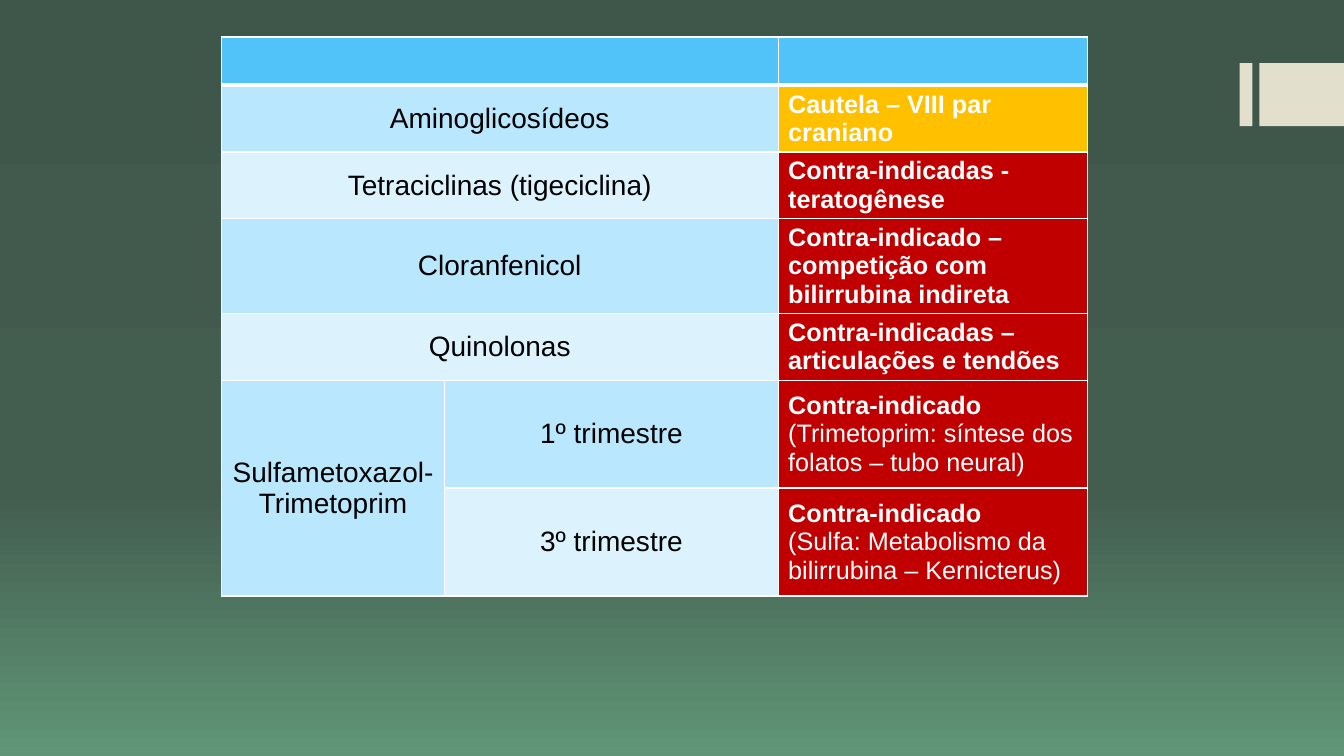
from copy import deepcopy

from lxml.etree import SubElement
from pptx import Presentation
from pptx.dml.color import RGBColor
from pptx.enum.shapes import MSO_SHAPE
from pptx.enum.text import MSO_ANCHOR, PP_ALIGN
from pptx.oxml.ns import qn
from pptx.util import Cm, Pt

BLACK = RGBColor(0x00, 0x00, 0x00)
WHITE = RGBColor(0xFF, 0xFF, 0xFF)
HEADER_BLUE = RGBColor(0x51, 0xC3, 0xF9)
BAND_BLUE = RGBColor(0xB9, 0xE7, 0xFD)
PALE_BLUE = RGBColor(0xDC, 0xF3, 0xFE)
AMBER = RGBColor(0xFF, 0xC0, 0x00)
RED = RGBColor(0xC0, 0x00, 0x00)
BEIGE = RGBColor(0xE2, 0xDF, 0xCC)
GRADIENT = [
    (0, RGBColor(0x3F, 0x56, 0x4A)),
    (0.65, RGBColor(0x43, 0x5D, 0x4F)),
    (1, RGBColor(0x60, 0x96, 0x77)),
]

ROWS = [
    ("", "", [], HEADER_BLUE),
    ("Aminoglicosídeos", "", ["Cautela – VIII par craniano"], AMBER),
    ("Tetraciclinas (tigeciclina)", "", ["Contra-indicadas - teratogênese"], RED),
    ("Cloranfenicol", "", ["Contra-indicado – competição com bilirrubina indireta"], RED),
    ("Quinolonas", "", ["Contra-indicadas – articulações e tendões"], RED),
    ("Sulfametoxazol-Trimetoprim", "1º trimestre",
     ["Contra-indicado", "(Trimetoprim: síntese dos folatos – tubo neural)"], RED),
    ("", "3º trimestre",
     ["Contra-indicado", "(Sulfa: Metabolismo da bilirrubina – Kernicterus)"], RED),
]
COLUMN_WIDTHS = [5.63, 8.4, 7.8]
ROW_HEIGHTS = [1.22, 1.68, 1.68, 2.38, 1.68, 2.72, 2.72]
TABLE_LEFT, TABLE_TOP = 5.58, 0.93
MARKERS = [(31.24, 0.32), (31.74, 2.13)]
MARKER_TOP, MARKER_HEIGHT = 1.59, 1.59


def write(para, text, size, color, bold=False, align=PP_ALIGN.LEFT):
    para.alignment = align
    span = para.add_run()
    span.text = text
    span.font.name = "Arial"
    span.font.size = Pt(size)
    span.font.bold = bold
    span.font.color.rgb = color


def add_borders(cell, bottom_width):
    properties = cell._tc.get_or_add_tcPr()
    widths = {"a:lnL": 1, "a:lnR": 1, "a:lnT": 1, "a:lnB": bottom_width}
    for index, (tag, width) in enumerate(widths.items()):
        line = SubElement(properties, qn(tag), w=str(Pt(width)))
        fill = SubElement(line, qn("a:solidFill"))
        SubElement(fill, qn("a:srgbClr"), val=str(WHITE))
        properties.insert(index, line)


def paint_background(page):
    fill = page.background.fill
    fill.gradient()
    fill.gradient_angle = 270
    stops = page.element.find(".//" + qn("a:gsLst"))
    stops.append(deepcopy(stops[0]))
    for stop, (position, color) in zip(fill.gradient_stops, GRADIENT):
        stop.position = position
        stop.color.rgb = color


def add_markers(page):
    for left, width in MARKERS:
        marker = page.shapes.add_shape(
            MSO_SHAPE.RECTANGLE, Cm(left), Cm(MARKER_TOP), Cm(width), Cm(MARKER_HEIGHT))
        marker.shadow.inherit = False
        marker.fill.solid()
        marker.fill.fore_color.rgb = BEIGE
        marker.line.fill.background()


def add_drug_table(page):
    table = page.shapes.add_table(
        len(ROWS), len(COLUMN_WIDTHS), Cm(TABLE_LEFT), Cm(TABLE_TOP),
        Cm(sum(COLUMN_WIDTHS)), Cm(sum(ROW_HEIGHTS))).table
    table.first_row = table.horz_banding = False
    for column, width in zip(table.columns, COLUMN_WIDTHS):
        column.width = Cm(width)
    for index, (drug, period, advice, advice_fill) in enumerate(ROWS):
        table.rows[index].height = Cm(ROW_HEIGHTS[index])
        band = BAND_BLUE if index % 2 else PALE_BLUE
        drug_fill = band if index else HEADER_BLUE
        cells = [table.cell(index, column) for column in range(len(COLUMN_WIDTHS))]
        for cell, color in zip(cells, (drug_fill, drug_fill, advice_fill)):
            cell.fill.solid()
            cell.fill.fore_color.rgb = color
            cell.vertical_anchor = MSO_ANCHOR.MIDDLE
            add_borders(cell, 1 if index else 3)
        for cell, text in zip(cells, (drug, period)):
            if text:
                write(cell.text_frame.paragraphs[0], text, 20, BLACK, align=PP_ALIGN.CENTER)
        frame = cells[2].text_frame
        for number, text in enumerate(advice):
            para = frame.add_paragraph() if number else frame.paragraphs[0]
            write(para, text, 18, WHITE, bold=number == 0)
        if not period:
            cells[0].merge(cells[1])
    table.cell(5, 0).merge(table.cell(6, 0))


def main():
    deck = Presentation()
    deck.slide_width, deck.slide_height = Cm(33.87), Cm(19.05)
    page = deck.slides.add_slide(deck.slide_layouts[6])
    paint_background(page)
    add_markers(page)
    add_drug_table(page)
    deck.save("out.pptx")


if __name__ == "__main__":
    main()
